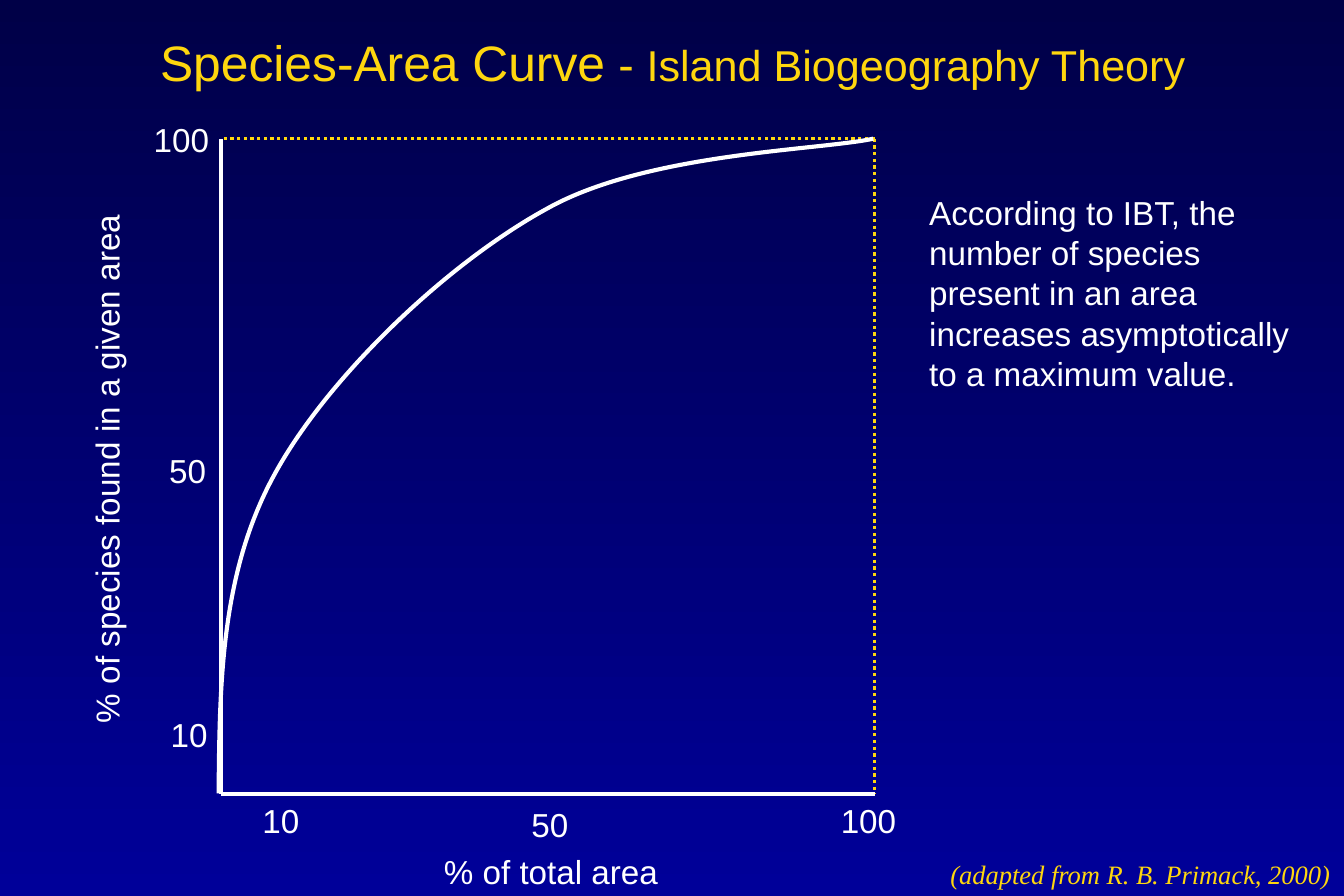
from lxml import etree
from pptx import Presentation
from pptx.dml.color import RGBColor
from pptx.enum.dml import MSO_LINE_DASH_STYLE as Dash
from pptx.enum.shapes import MSO_CONNECTOR as Connector
from pptx.enum.text import MSO_ANCHOR as Anchor, MSO_AUTO_SIZE as AutoSize, PP_ALIGN as Align
from pptx.oxml.ns import qn
from pptx.util import Cm, Pt

WHITE = RGBColor(0xFF, 0xFF, 0xFF)
GOLD = RGBColor(0xFE, 0xD6, 0x0E)
NIGHT = RGBColor(0x00, 0x00, 0x47)
NAVY = RGBColor(0x00, 0x00, 0x99)


class SlideBuilder:
    font = "Arial"
    text_size = 20
    leading = 1.21

    def __init__(self, slide):
        self.slide = slide

    def background(self, top_color, bottom_color):
        fill = self.slide.background.fill
        fill.gradient()
        fill.gradient_angle = 270
        for stop, color, position in zip(fill.gradient_stops, (top_color, bottom_color), (0, 1)):
            stop.color.rgb = color
            stop.position = position

    def set_runs(self, shape, runs, color, font=None, italic=False, wrap=True):
        """Fill a shape with one paragraph made of (text, size) runs."""
        frame = shape.text_frame
        frame.word_wrap = wrap
        frame.auto_size = AutoSize.SHAPE_TO_FIT_TEXT
        frame.vertical_anchor = Anchor.TOP
        paragraph = frame.paragraphs[0]
        paragraph.alignment = Align.LEFT
        paragraph.line_spacing = Pt(self.leading * max(size for _, size in runs))
        for text, size in runs:
            run = paragraph.add_run()
            run.text = text
            run.font.name = font or self.font
            run.font.size = Pt(size)
            run.font.italic = italic
            run.font.color.rgb = color

    def title(self, box, runs, color):
        heading = self.slide.shapes.title
        heading.left, heading.top, heading.width, heading.height = map(Cm, box)
        self.set_runs(heading, runs, color)

    def text(self, box, words, color=WHITE, size=text_size, rotation=0, **style):
        label = self.slide.shapes.add_textbox(*map(Cm, box))
        label.rotation = rotation
        self.set_runs(label, [(words, size)], color, **style)

    def line(self, start, end, color, dash=None):
        rule = self.slide.shapes.add_connector(Connector.STRAIGHT, *map(Cm, start + end))
        rule.line.color.rgb = color
        rule.line.width = Pt(2)
        if dash:
            rule.line.dash_style = dash
        etree.SubElement(rule._element.spPr, qn("a:effectLst"))

    def curve(self, start, controls, color):
        """Draw a Bézier curve; every three control points form one segment."""
        builder = self.slide.shapes.build_freeform(Cm(start[0]), Cm(start[1]))
        builder.add_line_segments([(Cm(x), Cm(y)) for x, y in controls], close=False)
        outline = builder.convert_to_shape()
        outline.shadow.inherit = False
        outline.fill.background()
        outline.line.color.rgb = color
        outline.line.width = Pt(2.5)
        segments = list(outline._element.iter(qn("a:lnTo")))
        for first in range(0, len(segments), 3):
            bezier = etree.Element(qn("a:cubicBezTo"))
            segments[first].addprevious(bezier)
            for segment in segments[first:first + 3]:
                bezier.append(segment[0])
                segment.getparent().remove(segment)


def main():
    deck = Presentation()
    deck.slide_width, deck.slide_height = Cm(28.58), Cm(19.05)
    builder = SlideBuilder(deck.slides.add_slide(deck.slide_layouts[5]))
    builder.background(NIGHT, NAVY)
    builder.title((3.15, 0.53, 22.94, 1.52),
                  [("Species-Area Curve", 30), (" - ", 28), ("Island Biogeography Theory", 26)],
                  GOLD)

    left, right, top, bottom = 4.7, 18.6, 2.95, 16.88
    origin, maximum = (left, bottom), (right, top)
    for corner in ((left, top), (right, bottom)):
        builder.line(maximum, corner, GOLD, Dash.ROUND_DOT)
        builder.line(corner, origin, WHITE)

    builder.curve((4.65, 16.87),
                  [(4.67, 14.48), (4.7, 12.12), (5.87, 10.03),
                   (7.01, 7.98), (9.5, 5.61), (11.61, 4.45),
                   (13.72, 3.25), (17.4, 3.2), (18.57, 2.95)], WHITE)

    line_height = 1.09
    for tick, x, y in (("10", 5.33, 16.89), ("50", 11.05, 16.97), ("100", 17.63, 16.89),
                       ("10", 3.38, 15.06), ("50", 3.35, 9.45), ("100", 3.02, 2.41)):
        builder.text((x, y, 1.8, line_height), tick)
    builder.text((9.19, 17.96, 7.25, line_height), "% of total area")
    builder.text((-5.13, 7.7, 14.76, line_height),
                 "% of species found in a given area", rotation=270)

    builder.text((19.51, 3.96, 8.71, 4.52),
                 "According to IBT, the number of species present in an area "
                 "increases asymptotically to a maximum value.")
    builder.text((19.96, 18.11, 8.6, 0.94), "(adapted from R. B. Primack, 2000)", GOLD, 16,
                 font="Times New Roman", italic=True, wrap=False)
    deck.save("out.pptx")


if __name__ == "__main__":
    main()
